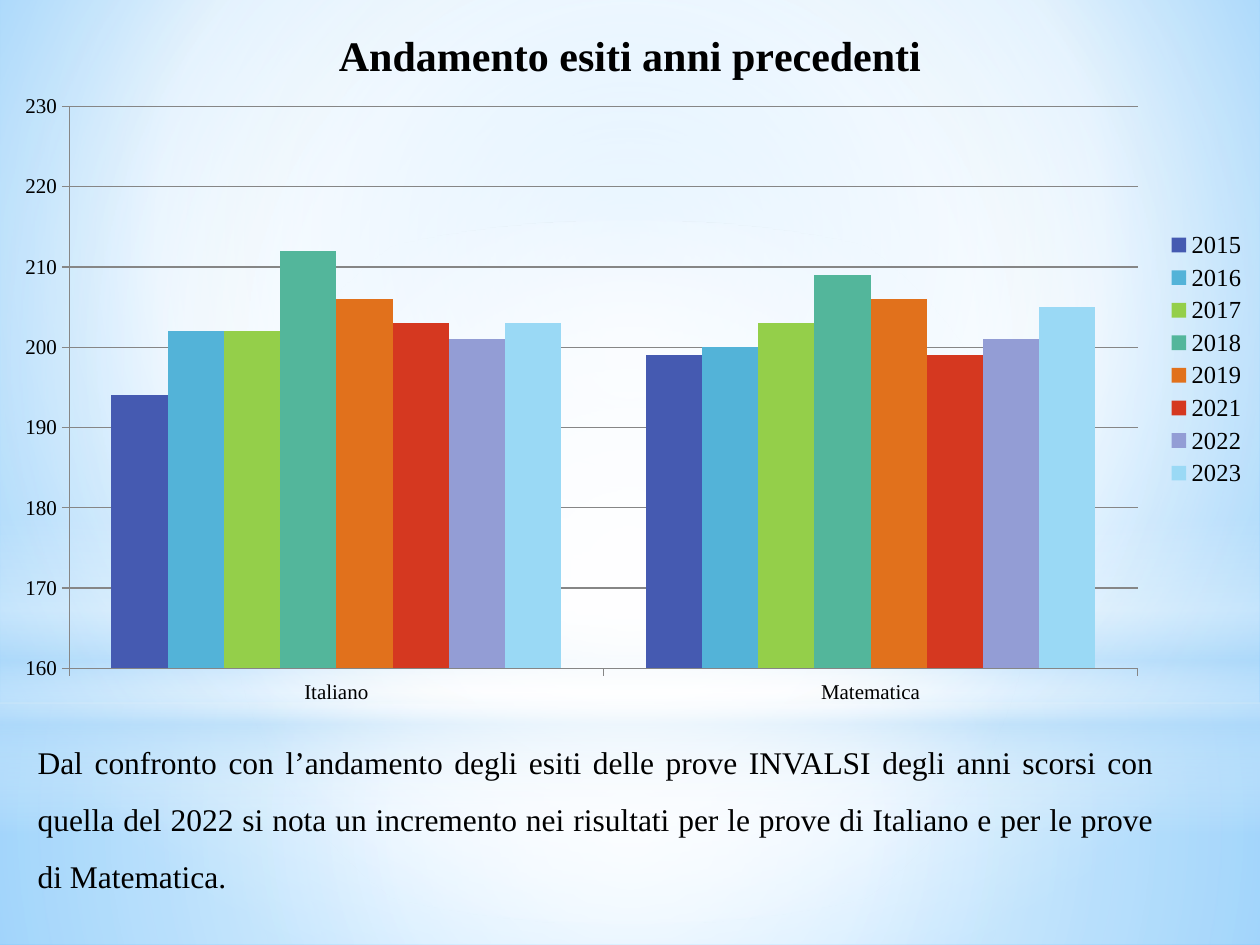
from lxml import etree
from pptx import Presentation
from pptx.chart.data import CategoryChartData
from pptx.dml.color import RGBColor
from pptx.enum import chart as charts, shapes, text
from pptx.oxml import parse_xml
from pptx.oxml.ns import nsdecls, qn
from pptx.util import Inches, Pt

COLORS = {
    "text": "000000", "line": "868686", "white": "FFFFFF", "pale": "B4DCFA",
    "sky": "9ED5FF", "deep": "5BB9FF",
    "2015": "455AB1", "2016": "53B3D8", "2017": "94CF4A", "2018": "53B69B",
    "2019": "E1711C", "2021": "D53820", "2022": "939DD5", "2023": "9AD9F5",
}
SUBJECTS = ["Italiano", "Matematica"]
RESULTS = {
    "2015": (194, 199), "2016": (202, 200), "2017": (202, 203), "2018": (212, 209),
    "2019": (206, 206), "2021": (203, 199), "2022": (201, 201), "2023": (203, 205),
}
COMMENT = (
    "Dal confronto con l’andamento degli esiti delle prove INVALSI degli anni scorsi "
    "con quella del 2022 si nota un incremento nei risultati per le prove di Italiano "
    "e per le prove di Matematica."
)


class SlideBuilder:
    def __init__(self, slide, font_name="Times New Roman"):
        self.slide = slide
        self.font_name = font_name

    def color(self, name):
        return RGBColor.from_string(COLORS[name])

    def style_font(self, font, size, bold=False):
        font.name = self.font_name
        font.size = Pt(size)
        font.bold = bold
        font.color.rgb = self.color("text")

    def gradient(self, fill, element, stops, focus=None):
        """Set (position, colour, opacity) stops; radial with a focus, else top to bottom."""
        fill.gradient()
        gradient = element.find(".//" + qn("a:gradFill"))
        for child in list(gradient):
            gradient.remove(child)
        stop_list = etree.SubElement(gradient, qn("a:gsLst"))
        for position, name, opacity in stops:
            stop = etree.SubElement(stop_list, qn("a:gs"), pos=str(position * 1000))
            color = etree.SubElement(stop, qn("a:srgbClr"), val=COLORS[name])
            if opacity < 100:
                etree.SubElement(color, qn("a:alpha"), val=str(opacity * 1000))
        if focus:
            route = etree.SubElement(gradient, qn("a:path"))
            route.set("path", "circle")
            sides = {side: str(share * 1000) for side, share in zip("ltrb", focus)}
            etree.SubElement(route, qn("a:fillToRect"), **sides)
        else:
            etree.SubElement(gradient, qn("a:lin"), ang="5400000", scaled="0")

    def background(self, stops, focus):
        self.gradient(self.slide.background.fill, self.slide.element, stops, focus)

    def glow(self, kind, top, height, stops, focus=None):
        """Add a full-width translucent shape."""
        shape = self.slide.shapes.add_shape(
            kind, 0, Inches(top), Inches(10), Inches(height))
        shape.shadow.inherit = False
        shape.line.fill.background()
        self.gradient(shape.fill, shape.element, stops, focus)

    def paragraph(self, left, top, width, height, words, size):
        box = self.slide.shapes.add_textbox(
            Inches(left), Inches(top), Inches(width), Inches(height))
        frame = box.text_frame
        frame.word_wrap = True
        frame.auto_size = text.MSO_AUTO_SIZE.SHAPE_TO_FIT_TEXT
        paragraph = frame.paragraphs[0]
        paragraph.alignment = text.PP_ALIGN.JUSTIFY
        paragraph.line_spacing = 1.5
        run = paragraph.add_run()
        run.text = words
        self.style_font(run.font, size)

    def column_chart(self, left, top, width, height, title, categories, results):
        data = CategoryChartData()
        data.categories = categories
        for year, values in results.items():
            data.add_series(year, values)
        chart = self.slide.shapes.add_chart(
            charts.XL_CHART_TYPE.COLUMN_CLUSTERED,
            Inches(left), Inches(top), Inches(width), Inches(height), data).chart
        self.style_font(chart.font, 10)

        chart.has_title = True
        run = chart.chart_title.text_frame.paragraphs[0].add_run()
        run.text = title
        self.style_font(run.font, 24, bold=True)

        chart.has_legend = True
        chart.legend.position = charts.XL_LEGEND_POSITION.RIGHT
        chart.legend.include_in_layout = False
        self.style_font(chart.legend.font, 14)

        plot = chart.plots[0]
        plot.gap_width = 150
        plot.overlap = 0
        plot.vary_by_categories = False
        for series in plot.series:
            series.format.fill.solid()
            series.format.fill.fore_color.rgb = self.color(series.name)
            series.invert_if_negative = False

        value_axis = chart.value_axis
        value_axis.minimum_scale = 160
        value_axis.maximum_scale = 230
        value_axis.major_unit = 10
        value_axis.has_major_gridlines = True
        for axis in (chart.category_axis, value_axis):
            axis.major_tick_mark = charts.XL_TICK_MARK.OUTSIDE
            self.style_font(axis.tick_labels.font, 12)
        for part in (chart.category_axis, value_axis, value_axis.major_gridlines):
            part.format.line.color.rgb = self.color("line")
            part.format.line.width = Pt(0.75)
        self.place_plot(chart, x=0.055, y=0.148, w=0.848, h=0.783)

    def place_plot(self, chart, **shares):
        """Fix the inner plot area as shares of the chart's size."""
        area = chart.element.find(".//" + qn("c:plotArea"))
        for layout in area.findall(qn("c:layout")):
            area.remove(layout)
        settings = {"layoutTarget": "inner", "xMode": "edge", "yMode": "edge", **shares}
        parts = "".join(f'<c:{key} val="{value}"/>' for key, value in settings.items())
        area.insert(0, parse_xml(
            f'<c:layout {nsdecls("c")}><c:manualLayout>{parts}</c:manualLayout></c:layout>'))


def main():
    presentation = Presentation()
    presentation.slide_width = Inches(10)
    presentation.slide_height = Inches(7.5)
    builder = SlideBuilder(presentation.slides.add_slide(presentation.slide_layouts[6]))

    center = (50, 50, 50, 50)
    rectangle = shapes.MSO_SHAPE.RECTANGLE
    builder.background(
        [(0, "sky", 100), (60, "white", 100), (100, "deep", 100)], (20, 10, 20, 60))
    builder.glow(rectangle, 5.58, 1.92,
                 [(0, "white", 91), (37, "white", 76), (100, "pale", 79)], center)
    builder.glow(rectangle, 0, 5.58,
                 [(0, "white", 89), (48, "white", 62), (100, "pale", 79)], center)
    builder.glow(rectangle, 4.12, 2.5,
                 [(0, "white", 0), (29, "white", 30), (45, "pale", 40),
                  (55, "white", 26), (65, "pale", 60), (100, "white", 0)])
    builder.glow(shapes.MSO_SHAPE.OVAL, 1.75, 5.58,
                 [(0, "white", 100), (56, "white", 0)], center)

    builder.paragraph(0.2, 5.7, 9.06, 1.46, COMMENT, 18)
    builder.column_chart(0, 0, 10, 5.7, "Andamento esiti anni precedenti", SUBJECTS, RESULTS)
    presentation.save("out.pptx")


if __name__ == "__main__":
    main()
